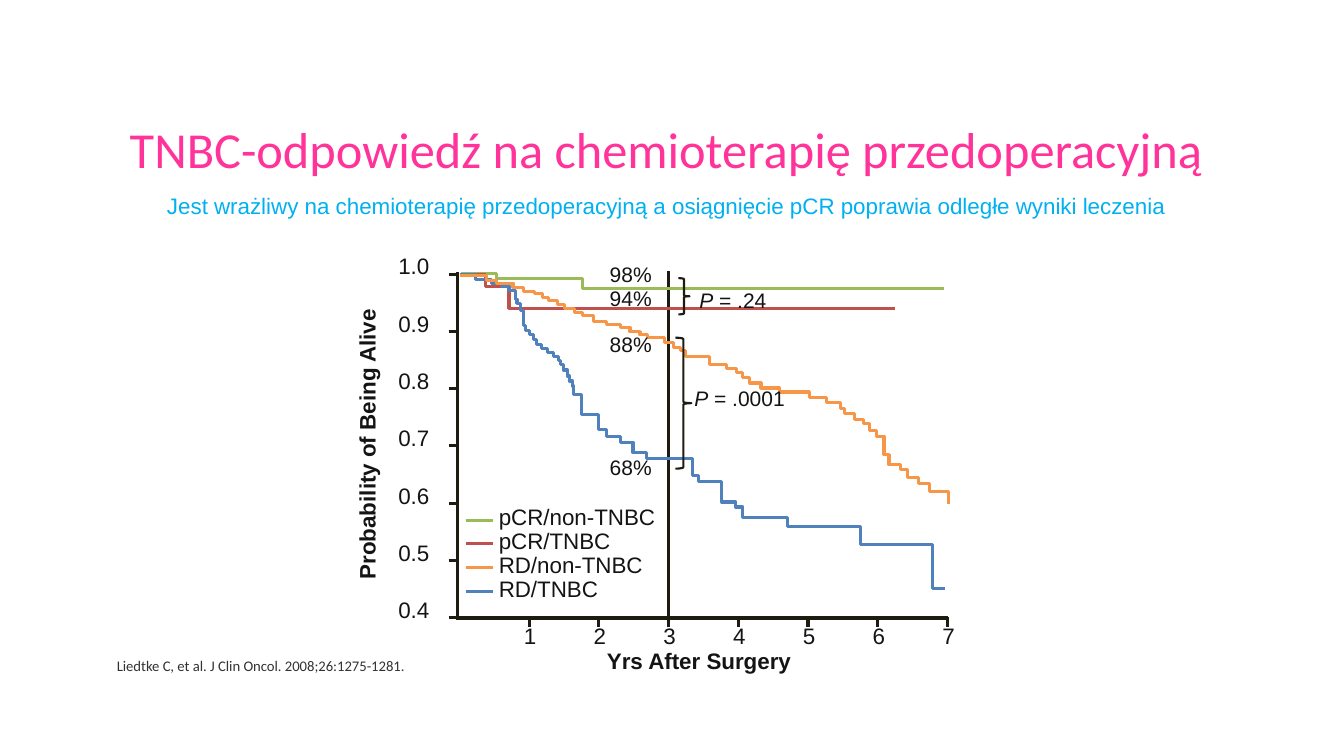
"""Builds a slide with survival curves after preoperative chemotherapy in TNBC."""
from lxml import etree
from pptx import Presentation
from pptx.dml.color import RGBColor
from pptx.enum.shapes import MSO_CONNECTOR, MSO_SHAPE
from pptx.enum.text import MSO_AUTO_SIZE, PP_ALIGN
from pptx.oxml.ns import qn
from pptx.util import Pt

LEFT, CENTER = PP_ALIGN.LEFT, PP_ALIGN.CENTER
GROW = MSO_AUTO_SIZE.SHAPE_TO_FIT_TEXT
LINE = MSO_CONNECTOR.STRAIGHT
BRACE = MSO_SHAPE.RIGHT_BRACE

PINK = RGBColor(0xFF, 0x33, 0x99)
SKY = RGBColor(0x00, 0xB0, 0xF0)
INK = RGBColor(0x14, 0x14, 0x15)
GRAY = RGBColor(0x32, 0x32, 0x35)
AXIS = RGBColor(0x1E, 0x1C, 0x11)
GREEN = RGBColor(0x9B, 0xBB, 0x59)
RED = RGBColor(0xC0, 0x50, 0x4D)
BLUE = RGBColor(0x4F, 0x81, 0xBD)
ORANGE = RGBColor(0xF7, 0x96, 0x46)

YSTEP, XSTEP, ROW = 40.9, 49.8, 17
UNIT = Pt(0.72)

deck = Presentation()
deck.slide_width, deck.slide_height = Pt(960), Pt(540)
slide = deck.slides.add_slide(deck.slide_layouts[6])
shapes = slide.shapes


def label(text, x, y, w, h, size=16, color=INK, align=LEFT, face="Arial",
          wrap=False, space=0.9):
    box = shapes.add_textbox(Pt(x), Pt(y), Pt(w), Pt(h))
    frame = box.text_frame
    frame.word_wrap = wrap
    frame.auto_size = GROW
    para = frame.paragraphs[0]
    para.text = text
    para.alignment = align
    para.line_spacing = space
    para.font.size = Pt(size)
    para.font.name = face
    para.font.color.rgb = color
    return box


def stroke(x1, y1, x2, y2, color=AXIS):
    line = shapes.add_connector(LINE, Pt(x1), Pt(y1), Pt(x2), Pt(y2))
    line.line.color.rgb = color
    line.line.width = Pt(2.25)
    etree.SubElement(line._element.spPr, qn("a:effectLst"))


label("TNBC-odpowiedź na chemioterapię przedoperacyjną", 72, 80.6, 807.8, 51,
      36, PINK, CENTER, "Calibri", True, 1.0)
lead = label("Jest wrażliwy na chemioterapię przedoperacyjną a osiągnięcie pCR "
             "poprawia odległe wyniki leczenia", 72, 132.5, 807.8, 30,
             16, SKY, CENTER, wrap=True, space=1.0).text_frame
lead.margin_left = lead.margin_right = Pt(9.4)
lead.margin_top = lead.margin_bottom = Pt(5)

stroke(477.4, 440.6, 477.4, 193.7)
stroke(326.9, 194.4, 326.9, 442)
stroke(325.4, 441.4, 677.5, 441.4)
for i in range(7):
    y = 195.8 + i * YSTEP
    stroke(320.4, y, 326.9, y)
    label(f"{1 - i / 10:.1f}", 277.4, y - 16.7, 36.7, 24.5)
    x = 378 + i * XSTEP
    stroke(x, 440.6, x, 447.8)
    label(str(i + 1), x - 11.2, 443, 23.8, 24.5, align=CENTER)

xname = label("Yrs After Surgery", 401, 460.8, 196.6, 24.5, align=CENTER, wrap=True)
yname = label("Probability of Being Alive", 146.2, 291.6, 234, 24.5, wrap=True)
yname.rotation = 270
for name in (xname, yname):
    name.text_frame.paragraphs[0].font.bold = True

names = ["pCR/non-TNBC", "pCR/TNBC", "RD/non-TNBC", "RD/TNBC"]
label("\v".join(names), 349.2, 357.8, 132.5, 79.2)

# Each curve: legend row, colour, start, last x, and drops as (x, new y).
curves = [
    (0, GREEN, (457, 271), 936, [(493, 276), (578, 286)]),
    (1, RED, (456, 272), 888, [(482, 284), (505, 306)]),
    (3, BLUE, (456, 272), 938, [
        (472, 277), (488, 281), (498, 284), (505, 288), (511, 297), (513, 301),
        (516, 308), (519, 323), (521, 328), (525, 332), (529, 337), (532, 342),
        (537, 346), (543, 350), (549, 354), (554, 358), (556, 362), (559, 367),
        (563, 373), (565, 378), (568, 383), (569, 391), (577, 411), (594, 426),
        (602, 433), (616, 439), (628, 449), (641, 455), (687, 472), (693, 478),
        (716, 498), (730, 503), (737, 513), (781, 522), (854, 540), (925, 584)]),
    (2, ORANGE, (456, 273), 941, [
        (483, 278), (493, 281), (509, 285), (519, 289), (530, 291), (538, 295),
        (544, 298), (553, 302), (560, 306), (570, 310), (578, 313), (589, 319),
        (602, 322), (616, 325), (625, 329), (635, 332), (642, 335), (659, 340),
        (668, 345), (675, 348), (680, 354), (704, 362), (721, 366), (731, 370),
        (737, 375), (744, 380), (755, 385), (773, 389), (803, 394), (820, 399),
        (834, 405), (838, 410), (848, 416), (857, 420), (863, 427), (870, 433),
        (877, 451), (882, 461), (893, 466), (900, 474), (911, 480), (922, 488),
        (941, 500)]),
]
for row, color, start, last, drops in curves:
    y = 371.5 + row * ROW
    stroke(332.6, y, 352.4, y, color)
    path = shapes.build_freeform(*start, scale=UNIT)
    level = start[1]
    points = []
    for x, drop in drops:
        points += [(x, level), (x, drop)]
        level = drop
    path.add_line_segments(points + [(last, level)], close=False)
    curve = path.convert_to_shape()
    curve.shadow.inherit = False
    curve.fill.background()
    curve.line.color.rgb = color
    curve.line.width = Pt(2.25)

for text, y in [("98%", 185), ("94%", 202.3), ("88%", 235.4), ("68%", 323.3)]:
    label(text, 428.4, y, 44.6, 23.8, 15)

for value, x, y, w in [(" = .24", 492.5, 203.8, 62.6), (" = .0001", 488.9, 273.6, 79.9)]:
    para = label("", x, y, w, 23.8, 15).text_frame.paragraphs[0]
    sign = para.add_run()
    sign.text = "P"
    sign.font.italic = True
    para.add_run().text = value

for x, y, w, h in [(484.6, 198.7, 7.9, 25.9), (482.4, 241.2, 11.5, 93.6)]:
    brace = shapes.add_shape(BRACE, Pt(x), Pt(y), Pt(w), Pt(h))
    brace.shadow.inherit = False
    brace.fill.background()
    brace.line.color.rgb = AXIS
    brace.line.width = Pt(1.5)

label("Liedtke C, et al. J Clin Oncol. 2008;26:1275-1281.", 76.3, 467.3, 224.6, 18.7,
      10.5, GRAY, face="Calibri")

deck.save("out.pptx")
